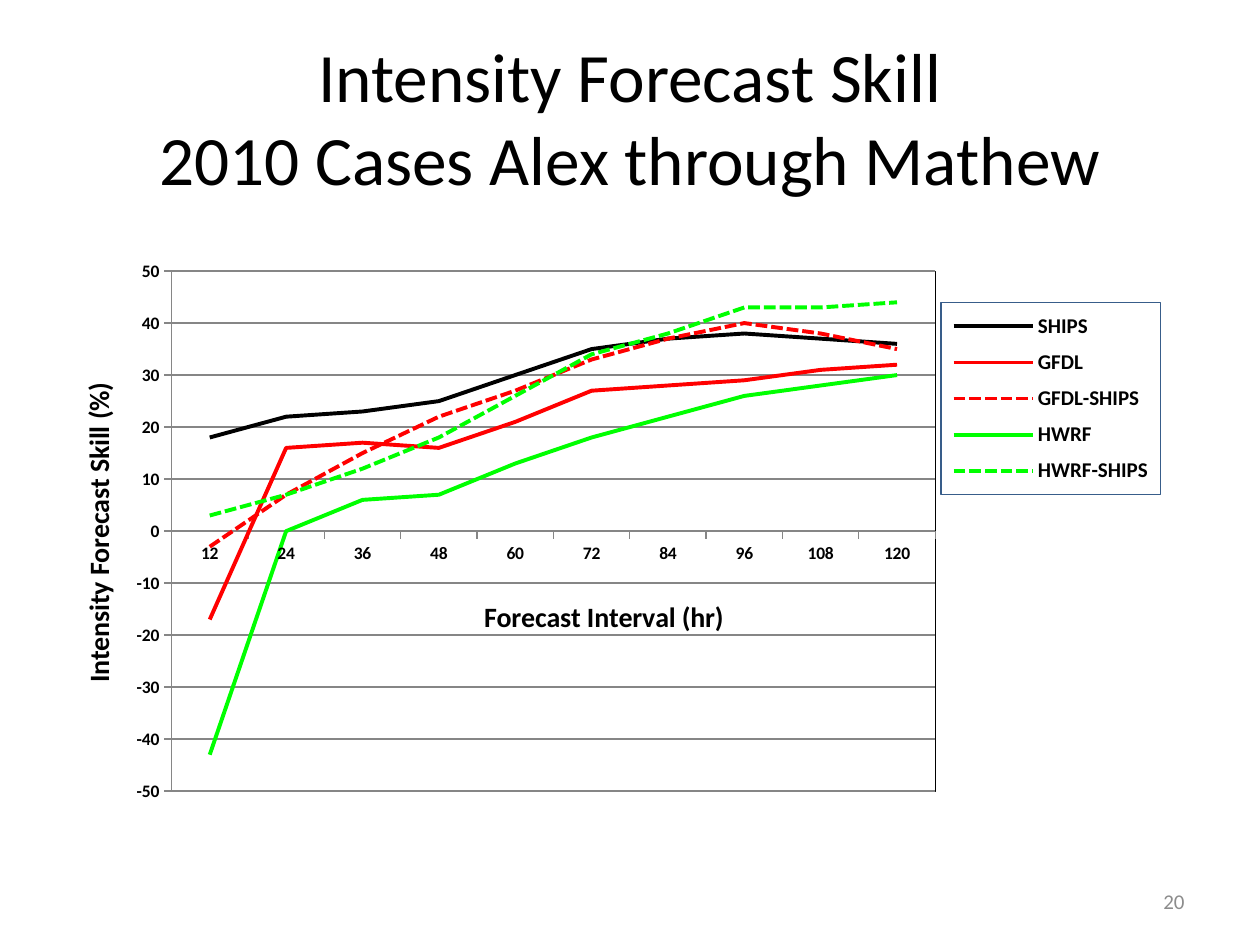
from dataclasses import dataclass

from pptx import Presentation
from pptx.chart.data import CategoryChartData
from pptx.dml.color import RGBColor
from pptx.enum.chart import XL_CHART_TYPE as ChartType
from pptx.enum.chart import XL_LEGEND_POSITION as LegendPosition
from pptx.enum.chart import XL_TICK_MARK as TickMark
from pptx.enum.dml import MSO_LINE
from pptx.enum.text import MSO_ANCHOR, PP_ALIGN
from pptx.oxml import parse_xml
from pptx.oxml.ns import nsdecls
from pptx.util import Inches, Pt


@dataclass(frozen=True)
class Theme:
    font: str = "Calibri"
    black: str = "000000"
    red: str = "FF0000"
    green: str = "00FF00"
    grid: str = "868686"
    legend_border: str = "385D8A"
    page_gray: str = "8C8C8C"
    title_size: float = 39.6
    axis_title_size: float = 16
    small_size: float = 12
    tick_size: float = 10
    series_width: float = 2.25
    hairline: float = 0.75


THEME = Theme()
HOURS = [str(hour) for hour in range(12, 121, 12)]
SKILL = [
    ("SHIPS", THEME.black, False, [18, 22, 23, 25, 30, 35, 37, 38, 37, 36]),
    ("GFDL", THEME.red, False, [-17, 16, 17, 16, 21, 27, 28, 29, 31, 32]),
    ("GFDL-SHIPS", THEME.red, True, [-3, 7, 15, 22, 27, 33, 37, 40, 38, 35]),
    ("HWRF", THEME.green, False, [-43, 0, 6, 7, 13, 18, 22, 26, 28, 30]),
    ("HWRF-SHIPS", THEME.green, True, [3, 7, 12, 18, 26, 34, 38, 43, 43, 44]),
]


def style_font(font, size, color=THEME.black, bold=False):
    font.name = THEME.font
    font.size = Pt(size)
    font.bold = bold
    font.color.rgb = RGBColor.from_string(color)


def write_text(frame, text, align=PP_ALIGN.CENTER, **font_format):
    """Fill the frame's first paragraph; a vertical tab makes a line break."""
    paragraph = frame.paragraphs[0]
    paragraph.text = text
    paragraph.alignment = align
    for run in paragraph.runs:
        style_font(run.font, **font_format)


def style_line(line, color, width):
    line.color.rgb = RGBColor.from_string(color)
    line.width = Pt(width)


def place(element, index, x, y, width=None, height=None, inner=False):
    """Set a manual layout, in fractions of the chart area."""
    for old in element.xpath("c:layout"):
        element.remove(old)
    target = '<c:layoutTarget val="inner"/>' if inner else ""
    sizes = "".join(f'<c:{tag} val="{value}"/>'
                    for tag, value in (("w", width), ("h", height)) if value)
    element.insert(index, parse_xml(
        f'<c:layout {nsdecls("c")}><c:manualLayout>{target}'
        '<c:xMode val="edge"/><c:yMode val="edge"/>'
        f'<c:x val="{x}"/><c:y val="{y}"/>{sizes}'
        '</c:manualLayout></c:layout>'))


def border_properties(color):
    return parse_xml(
        f'<c:spPr {nsdecls("c", "a")}><a:noFill/>'
        f'<a:ln w="{Pt(THEME.hairline)}"><a:solidFill>'
        f'<a:srgbClr val="{color}"/></a:solidFill></a:ln></c:spPr>')


class SlideBuilder:
    def __init__(self, slide, theme):
        self.slide = slide
        self.theme = theme

    def text(self, text, left, top, width, height, **text_format):
        box = self.slide.shapes.add_textbox(
            Inches(left), Inches(top), Inches(width), Inches(height))
        frame = box.text_frame
        frame.word_wrap = True
        frame.vertical_anchor = MSO_ANCHOR.MIDDLE
        write_text(frame, text, **text_format)

    def line_chart(self, categories, rows, left, top, width, height):
        data = CategoryChartData()
        data.categories = categories
        for name, _, _, values in rows:
            data.add_series(name, values)
        chart = self.slide.shapes.add_chart(
            ChartType.LINE, Inches(left), Inches(top),
            Inches(width), Inches(height), data).chart
        chart.has_title = False
        style_font(chart.font, self.theme.tick_size)
        chart.plots[0].vary_by_categories = False
        for series, (_, color, dashed, _) in zip(chart.plots[0].series, rows):
            series.smooth = False
            style_line(series.format.line, color, self.theme.series_width)
            if dashed:
                series.format.line.dash_style = MSO_LINE.SQUARE_DOT
        return chart

    def axis(self, axis, title, x, y):
        write_text(axis.axis_title.text_frame, title,
                   size=self.theme.axis_title_size, bold=True)
        place(axis.axis_title.element, 1, x, y)
        style_font(axis.tick_labels.font, self.theme.tick_size, bold=True)
        axis.major_tick_mark = TickMark.OUTSIDE
        axis.minor_tick_mark = TickMark.NONE
        style_line(axis.format.line, self.theme.grid, self.theme.hairline)

    def value_scale(self, axis, low, high, step):
        axis.minimum_scale, axis.maximum_scale = low, high
        axis.major_unit = step
        axis.has_major_gridlines = True
        style_line(axis.major_gridlines.format.line,
                   self.theme.grid, self.theme.hairline)

    def plot_frame(self, chart, **layout):
        plot_area = chart.element.xpath("c:chart/c:plotArea")[0]
        place(plot_area, 0, inner=True, **layout)
        plot_area.append(border_properties(self.theme.black))

    def legend(self, chart, **layout):
        chart.has_legend = True
        chart.legend.position = LegendPosition.RIGHT
        chart.legend.include_in_layout = False
        style_font(chart.legend.font, self.theme.small_size, bold=True)
        legend = chart.element.xpath("c:chart/c:legend")[0]
        place(legend, 1, **layout)
        legend.xpath("c:txPr")[0].addprevious(
            border_properties(self.theme.legend_border))


def main():
    presentation = Presentation()
    presentation.slide_width = Inches(10)
    presentation.slide_height = Inches(7.5)
    blank = presentation.slide_layouts[6]
    builder = SlideBuilder(presentation.slides.add_slide(blank), THEME)

    builder.text("Intensity Forecast Skill\v2010 Cases Alex through Mathew",
                 0.5, 0.3, 9, 1.25, size=THEME.title_size)
    builder.text("20", 7.17, 6.95, 2.33, 0.4, align=PP_ALIGN.RIGHT,
                 size=THEME.small_size, color=THEME.page_gray)

    skill_chart = builder.line_chart(HOURS, SKILL, 0.5, 2, 9.17, 4.75)
    builder.axis(skill_chart.category_axis, "Forecast Interval (hr)", 0.36, 0.57)
    builder.axis(skill_chart.value_axis, "Intensity Forecast Skill (%)", 0.01, 0.21)
    builder.value_scale(skill_chart.value_axis, -50, 50, 10)
    builder.plot_frame(skill_chart, x=0.094, y=0.032, width=0.661, height=0.869)
    builder.legend(skill_chart, x=0.76, y=0.085, width=0.19, height=0.32)

    presentation.save("out.pptx")


if __name__ == "__main__":
    main()
